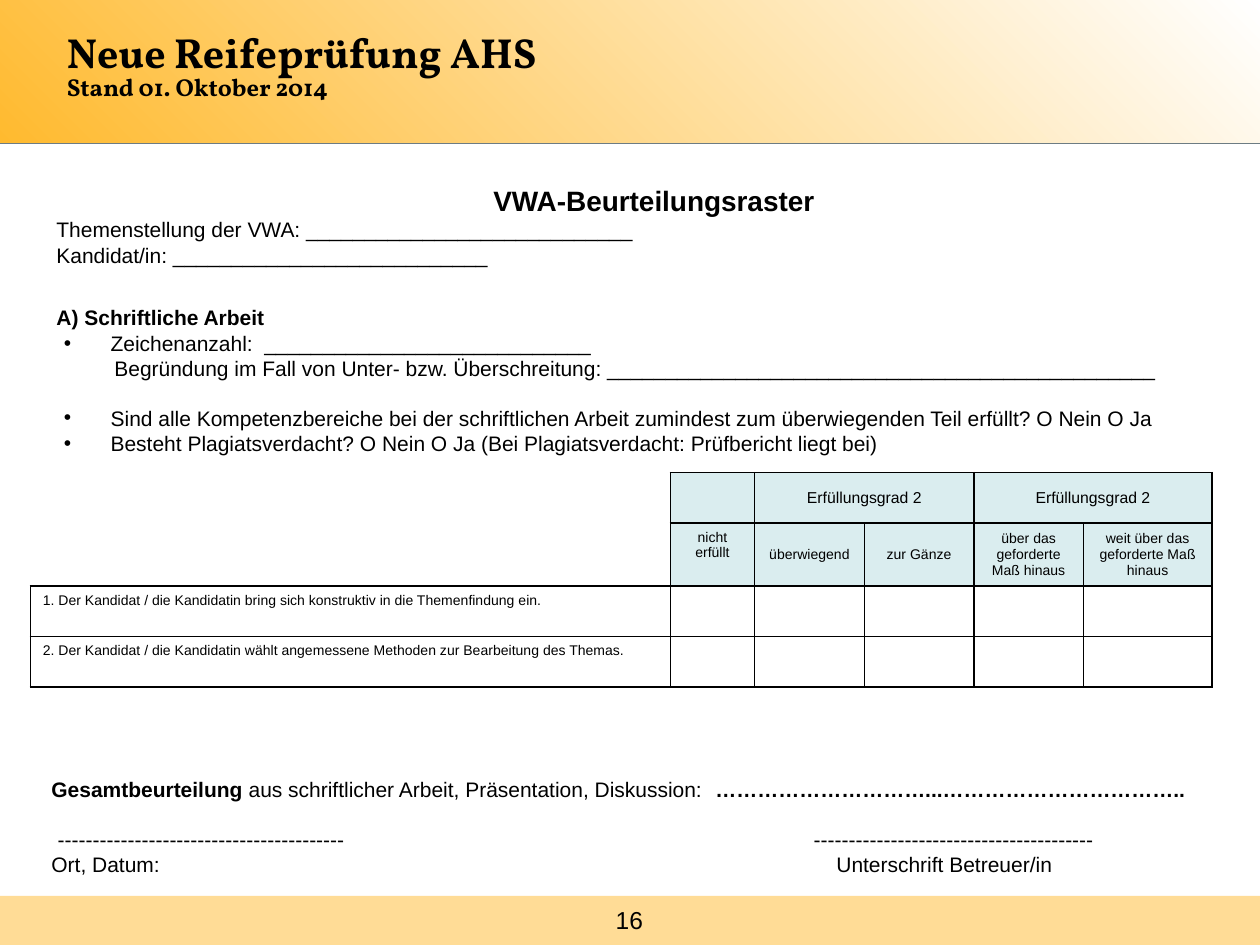
import pptx
import pptx.util
import pptx.oxml
import pptx.oxml.ns
import pptx.dml.color
import pptx.enum.text
import pptx.enum.shapes
from dataclasses import dataclass

Inches = pptx.util.Inches
Pt = pptx.util.Pt
Align = pptx.enum.text.PP_ALIGN
Anchor = pptx.enum.text.MSO_ANCHOR
NS = pptx.oxml.ns.nsdecls("a")


@dataclass
class Theme:
    ink: str = "000000"
    gold: str = "FFBA2F"
    white: str = "FFFFFF"
    rule: str = "6D7C83"
    mint: str = "DAEDEF"
    serif: str = "Vollkorn"
    sans: str = "Arial"
    title: int = 24
    head: int = 16
    sub: int = 14
    text: int = 12
    label: int = 9
    small: int = 8


def rgb(code):
    return pptx.dml.color.RGBColor.from_string(code)


def node(xml):
    return pptx.oxml.parse_xml(xml)


class Page:
    def __init__(self, deck, theme):
        self.theme = theme
        self.slide = deck.slides.add_slide(deck.slide_layouts[5])
        self.shapes = self.slide.shapes

    def font(self, run, size, bold=False, face=None):
        run.font.name = face or self.theme.sans
        run.font.size = Pt(size)
        run.font.bold = bold
        run.font.color.rgb = rgb(self.theme.ink)

    def band(self, box):
        shape = self.shapes.add_shape(
            pptx.enum.shapes.MSO_SHAPE.RECTANGLE, *map(Inches, box))
        shape.shadow.inherit = False
        shape.line.fill.background()
        return shape

    def glow(self, box):
        fill = self.band(box).fill
        fill.gradient()
        for stop, code in zip(fill.gradient_stops,
                              (self.theme.gold, self.theme.white)):
            stop.color.rgb = rgb(code)
        grad = fill._xPr.find(pptx.oxml.ns.qn("a:gradFill"))
        grad.replace(grad.find(pptx.oxml.ns.qn("a:lin")), node(
            f'<a:path {NS} path="circle"><a:fillToRect t="100000" r="100000"/></a:path>'))

    def tint(self, box):
        fill = self.band(box).fill
        fill.solid()
        fill.fore_color.rgb = rgb(self.theme.gold)
        color = fill._xPr.find(".//" + pptx.oxml.ns.qn("a:srgbClr"))
        color.append(node(f'<a:alpha {NS} val="50000"/>'))

    def line(self, x1, y1, x2, y2):
        line = self.shapes.add_connector(
            pptx.enum.shapes.MSO_CONNECTOR.STRAIGHT,
            *map(Inches, (x1, y1, x2, y2)))
        line.line.color.rgb = rgb(self.theme.rule)
        line.line.width = Pt(1)
        line._element.spPr.append(node(f"<a:effectLst {NS}/>"))

    def title(self, box, lines):
        shape = self.shapes.title
        shape.left, shape.top, shape.width, shape.height = map(Inches, box)
        frame = shape.text_frame
        frame.text = "\n".join(lines)
        frame.word_wrap = True
        frame.auto_size = pptx.enum.text.MSO_AUTO_SIZE.NONE
        frame.vertical_anchor = Anchor.TOP
        frame.margin_top = Inches(0.16)
        sizes = (self.theme.title, self.theme.sub)
        for para, size in zip(frame.paragraphs, sizes):
            para.alignment = Align.LEFT
            para.space_before = Pt(0)
            self.font(para.runs[0], size, True, self.theme.serif)
        frame.paragraphs[1].line_spacing = Pt(14)
        self.shapes._spTree.append(shape._element)

    def text(self, box, rows, anchor):
        frame = self.shapes.add_textbox(*map(Inches, box)).text_frame
        frame.word_wrap = True
        frame.vertical_anchor = anchor
        for spot, row in enumerate(rows):
            para = frame.add_paragraph() if spot else frame.paragraphs[0]
            self.para(para, **row)

    def para(self, para, runs, size=None, align=Align.LEFT,
             before=0, left=0, mark=False, tab=None):
        para.alignment = align
        if before:
            para.space_before = Pt(before)
        props = para._p.get_or_add_pPr()
        props.set("marL", str(Inches(left)))
        if mark:
            props.set("indent", str(Inches(-0.37)))
            props.append(node(f'<a:buFont {NS} typeface="{self.theme.sans}"/>'))
            props.append(node(f'<a:buChar {NS} char="•"/>'))
        if tab:
            props.append(node(
                f'<a:tabLst {NS}><a:tab pos="{Inches(tab)}" algn="l"/></a:tabLst>'))
        for words, bold in runs:
            run = para.add_run()
            run.text = words
            self.font(run, size or self.theme.text, bold)

    def edge(self, cell, sides):
        props = cell._tc.get_or_add_tcPr()
        for side in "LRTB":
            paint = (f'<a:solidFill><a:srgbClr val="{self.theme.ink}"/></a:solidFill>'
                     if side in sides else "<a:noFill/>")
            props.append(node(f'<a:ln{side} {NS} w="{Pt(1)}">{paint}</a:ln{side}>'))

    def cell(self, cell, words, size, align, anchor):
        cell.vertical_anchor = anchor
        cell.text = words
        para = cell.text_frame.paragraphs[0]
        para.alignment = align
        for run in para.runs:
            self.font(run, size)

    def grid(self, box, cols, rows, data):
        table = self.shapes.add_table(
            len(rows), len(cols), *map(Inches, box)).table
        table.first_row = table.horz_banding = False
        for col, width in zip(table.columns, cols):
            col.width = Inches(width)
        for row, height in zip(table.rows, rows):
            row.height = Inches(height)
        bare = {(0, 0): "R", (1, 0): "RB"}
        for y, line in enumerate(data):
            for x, words in enumerate(line):
                cell = table.cell(y, x)
                self.edge(cell, bare.get((y, x), "LRTB"))
                if y < 2 and x:
                    cell.fill.solid()
                    cell.fill.fore_color.rgb = rgb(self.theme.mint)
                else:
                    cell.fill.background()
                if words:
                    size = self.theme.small if y else self.theme.label
                    high = x == 0 or (y, x) == (1, 1)
                    self.cell(cell, words, size,
                              Align.CENTER if x else Align.LEFT,
                              Anchor.TOP if high else Anchor.MIDDLE)
        for x in (2, 4):
            table.cell(0, x).merge(table.cell(0, x + 1))


def main():
    deck = pptx.Presentation()
    deck.slide_width, deck.slide_height = Inches(10), Inches(7.5)
    theme = Theme()
    page = Page(deck, theme)
    page.glow((0, 0, 10, 1.14))
    page.line(0, 1.14, 10, 1.14)
    page.tint((0, 7.11, 10, 0.39))
    page.text((3.83, 7.14, 2.33, 0.32), [
        dict(runs=[("16", False)], size=theme.sub, align=Align.CENTER),
    ], Anchor.MIDDLE)
    page.title((0.43, 0.05, 7.4, 1.02),
               ("Neue Reifeprüfung AHS", "Stand 01. Oktober 2014"))
    page.text((0.35, 1.34, 9.13, 2.39), [
        dict(runs=[("VWA-Beurteilungsraster", True)], size=theme.head,
             align=Align.CENTER, left=0.55),
        dict(runs=[("Themenstellung der VWA: " + "_" * 28, False)]),
        dict(runs=[("Kandidat/in: " + "_" * 27, False)]),
        dict(runs=[("A) Schriftliche Arbeit", True)], before=21.5),
        dict(runs=[("Zeichenanzahl:\t" + "_" * 28, False)],
             left=0.43, mark=True, tab=1.65),
        dict(runs=[("Begründung im Fall von Unter- bzw. Überschreitung: "
                    + "_" * 47, False)], left=0.46),
        dict(runs=[("Sind alle Kompetenzbereiche bei der schriftlichen Arbeit "
                    "zumindest zum überwiegenden Teil erfüllt? O Nein O Ja",
                    False)], left=0.43, mark=True, before=14),
        dict(runs=[("Besteht Plagiatsverdacht? O Nein O Ja "
                    "(Bei Plagiatsverdacht: Prüfbericht liegt bei)", False)],
             left=0.43, mark=True),
    ], Anchor.MIDDLE)
    page.text((0.31, 5.8, 9.21, 1.21), [
        dict(runs=[("Gesamtbeurteilung ", True),
                   ("aus schriftlicher Arbeit, Präsentation, Diskussion:\t", False),
                   ("…………………………...……………………………..", True)], tab=5.27),
        dict(runs=[("-" * 41 + "\t" + "-" * 40, False)],
             before=14, left=0.05, tab=6),
        dict(runs=[("Ort, Datum:\tUnterschrift Betreuer/in", False)], tab=6.23),
    ], Anchor.BOTTOM)
    blank = [""] * 5
    page.grid((0.24, 3.75, 9.38, 1.7), (5.08, 0.67, 0.87, 0.87, 0.87, 1.02),
              (0.4, 0.5, 0.4, 0.4), [
        ["", "", "Erfüllungsgrad 2", "", "Erfüllungsgrad 2", ""],
        ["", "nicht erfüllt", "überwiegend", "zur Gänze",
         "über das geforderte Maß hinaus", "weit über das geforderte Maß hinaus"],
        ["1. Der Kandidat / die Kandidatin bring sich konstruktiv "
         "in die Themenfindung ein."] + blank,
        ["2. Der Kandidat / die Kandidatin wählt angemessene Methoden "
         "zur Bearbeitung des Themas."] + blank,
    ])
    deck.save("out.pptx")


if __name__ == "__main__":
    main()
